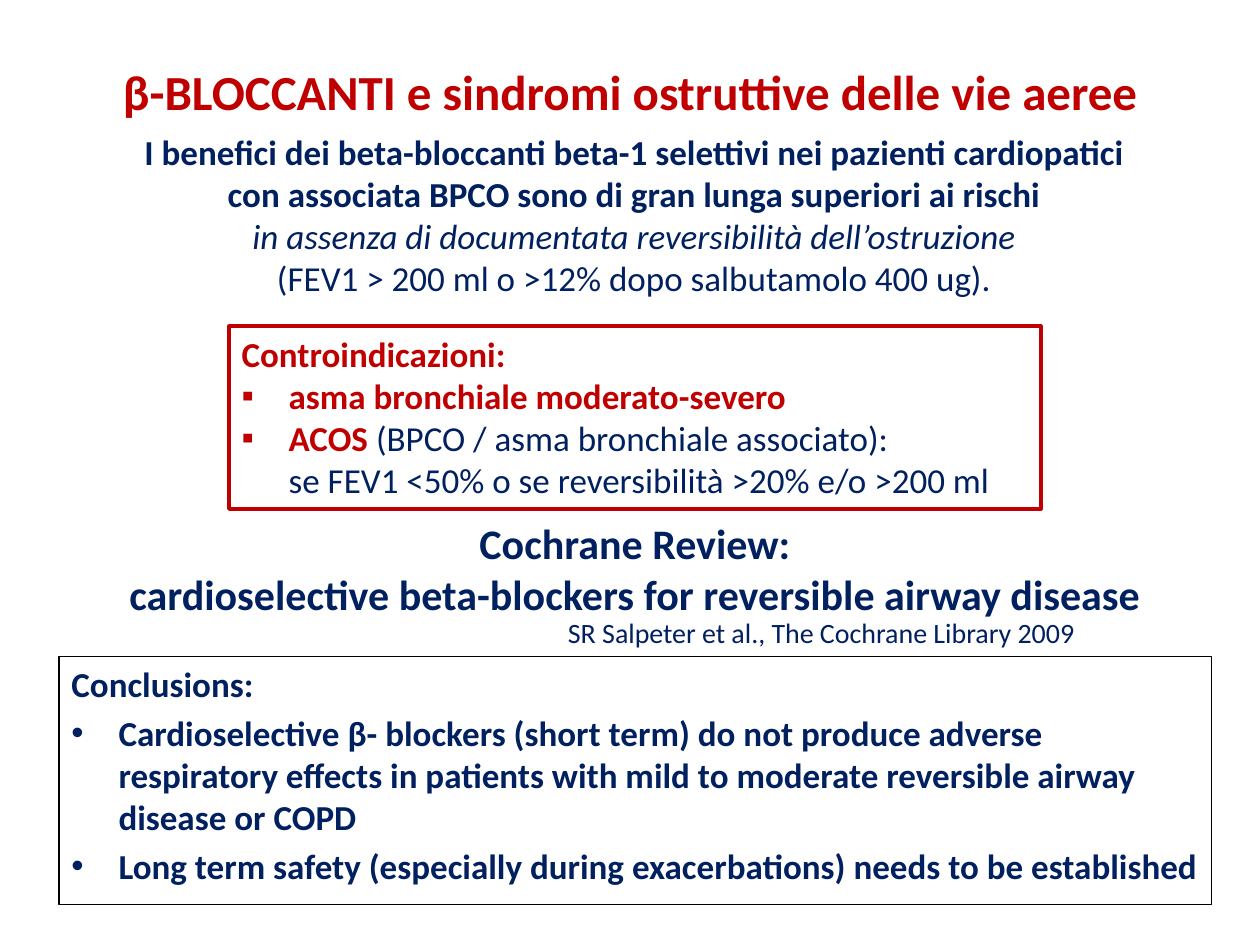
"""Build the slide on beta-blockers and obstructive airway disease."""
from dataclasses import dataclass
from lxml.etree import SubElement
from pptx import Presentation
from pptx.dml.color import RGBColor as RGB
from pptx.enum.shapes import MSO_SHAPE as Kind
from pptx.enum.text import MSO_ANCHOR as Anchor, PP_ALIGN as Align
from pptx.oxml.ns import qn
from pptx.util import Cm, Pt


@dataclass(frozen=True)
class Theme:
    font: str = "Calibri"
    red: RGB = RGB(0xC0, 0x00, 0x00)
    navy: RGB = RGB(0x00, 0x20, 0x60)
    black: RGB = RGB(0x00, 0x00, 0x00)
    white: RGB = RGB(0xFF, 0xFF, 0xFF)
    title: int = 28
    head: int = 24
    body: int = 20
    cite: int = 16


theme = Theme()


def write(shape, lines, size, align=Align.LEFT, anchor=Anchor.TOP, gap=0):
    frame = shape.text_frame
    frame.word_wrap = True
    frame.vertical_anchor = anchor
    for i, (mark, parts) in enumerate(lines):
        para = frame.paragraphs[0] if i == 0 else frame.add_paragraph()
        para.alignment = align
        if i and gap:
            para.space_before = Pt(gap)
        if mark is not None:
            props = para._p.get_or_add_pPr()
            props.set("marL", str(Cm(0.95)))
            props.set("indent", str(-Cm(0.95) if mark else 0))
            if mark:
                SubElement(props, qn("a:buFont"), typeface="Arial")
                SubElement(props, qn("a:buChar"), char=mark)
        for text, color, style in parts:
            run = para.add_run()
            run.text = text
            run.font.name = theme.font
            run.font.size = Pt(size)
            run.font.color.rgb = color
            run.font.bold = "b" in style
            run.font.italic = "i" in style


deck = Presentation()
deck.slide_width, deck.slide_height = Cm(25.4), Cm(19.05)
shapes = deck.slides.add_slide(deck.slide_layouts[6]).shapes
red, navy = theme.red, theme.navy

title = shapes.add_textbox(Cm(1.27), Cm(0.76), Cm(22.86), Cm(2.16))
write(title, [(None, [("β-BLOCCANTI e sindromi ostruttive delle vie aeree", red, "b")])],
      theme.title, Align.CENTER, Anchor.MIDDLE)

gains = shapes.add_textbox(Cm(1.09), Cm(2.51), Cm(23.39), Cm(3.68))
write(gains, [
    (None, [("I benefici dei beta-bloccanti beta-1 selettivi nei pazienti cardiopatici", navy, "b")]),
    (None, [("con associata BPCO sono di gran lunga superiori ai rischi", navy, "b")]),
    (None, [("in assenza di documentata reversibilità dell’ostruzione", navy, "i")]),
    (None, [("(FEV1 > 200 ml o >12% dopo salbutamolo 400 ug).", navy, "")]),
], theme.body, Align.CENTER)

review = shapes.add_textbox(Cm(0.2), Cm(10.31), Cm(25.2), Cm(2.31))
write(review, [
    (None, [("Cochrane Review:", navy, "b")]),
    (None, [("cardioselective beta-blockers for reversible airway disease", navy, "b")]),
], theme.head, Align.CENTER)

cite = shapes.add_textbox(Cm(11.2), Cm(12.29), Cm(13.11), Cm(0.94))
write(cite, [(None, [("SR Salpeter et al., The Cochrane Library 2009", navy, "")])], theme.cite)

risks = shapes.add_shape(Kind.RECTANGLE, Cm(4.62), Cm(6.58), Cm(16.36), Cm(3.68))
risks.fill.background()
write(risks, [
    (None, [("Controindicazioni:", red, "b")]),
    ("▪", [("asma bronchiale moderato-severo", red, "b")]),
    ("▪", [("ACOS ", red, "b"), ("(BPCO / asma bronchiale associato):", navy, "")]),
    ("", [("se FEV1 <50% o se reversibilità >20% e/o >200 ml", navy, "")]),
], theme.body)

ends = shapes.add_shape(Kind.RECTANGLE, Cm(1.19), Cm(13.23), Cm(23.24), Cm(5))
ends.fill.solid()
ends.fill.fore_color.rgb = theme.white
write(ends, [
    (None, [("Conclusions:", navy, "b")]),
    ("•", [("Cardioselective β- blockers (short term) do not produce adverse respiratory effects "
            "in patients with mild to moderate reversible airway disease or COPD", navy, "b")]),
    ("•", [("Long term safety (especially during exacerbations) needs to be established", navy, "b")]),
], theme.body, gap=4)

for box, color, width in ((risks, red, 2.25), (ends, theme.black, 0.75)):
    box.shadow.inherit = False
    box.line.color.rgb = color
    box.line.width = Pt(width)

deck.save("out.pptx")
